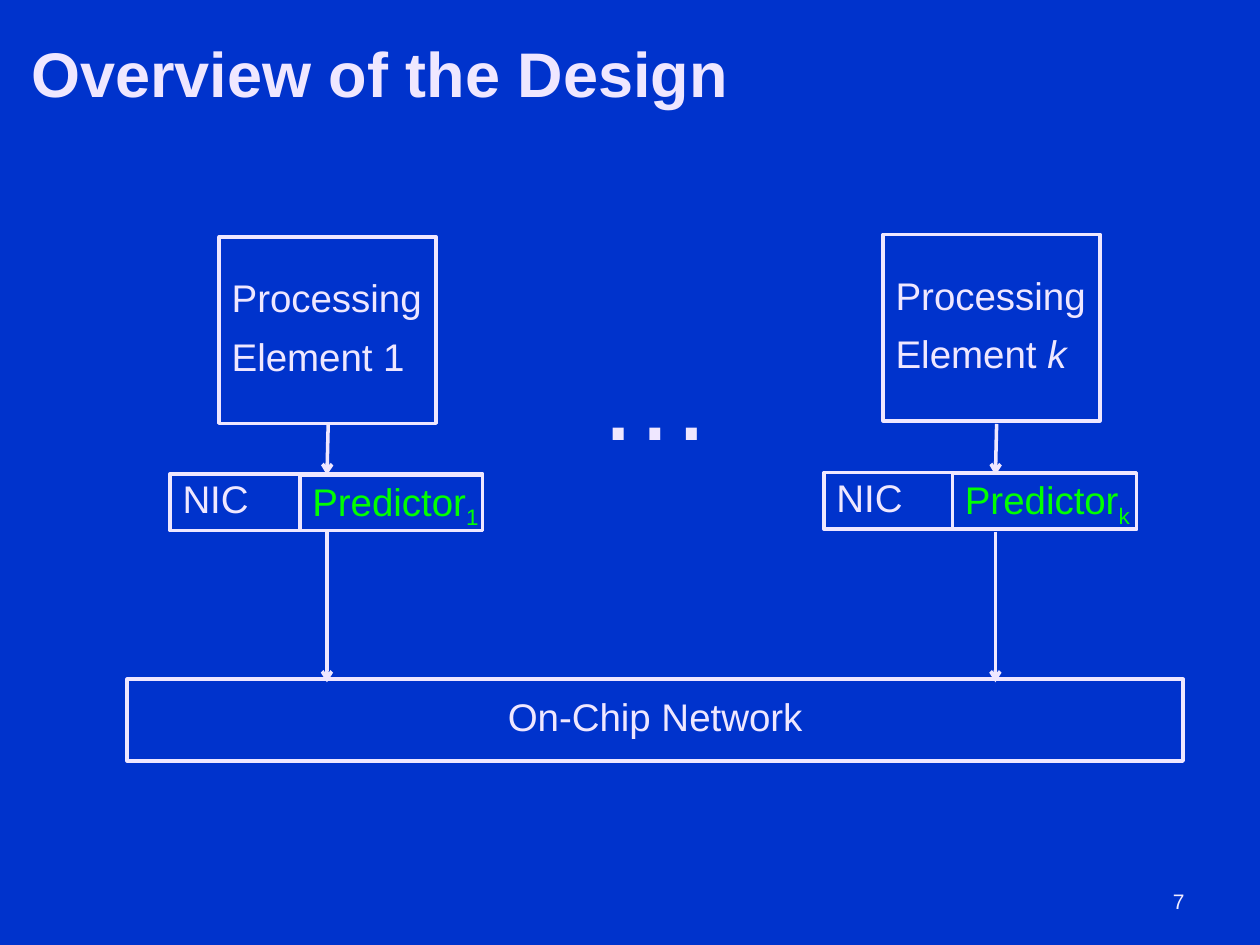
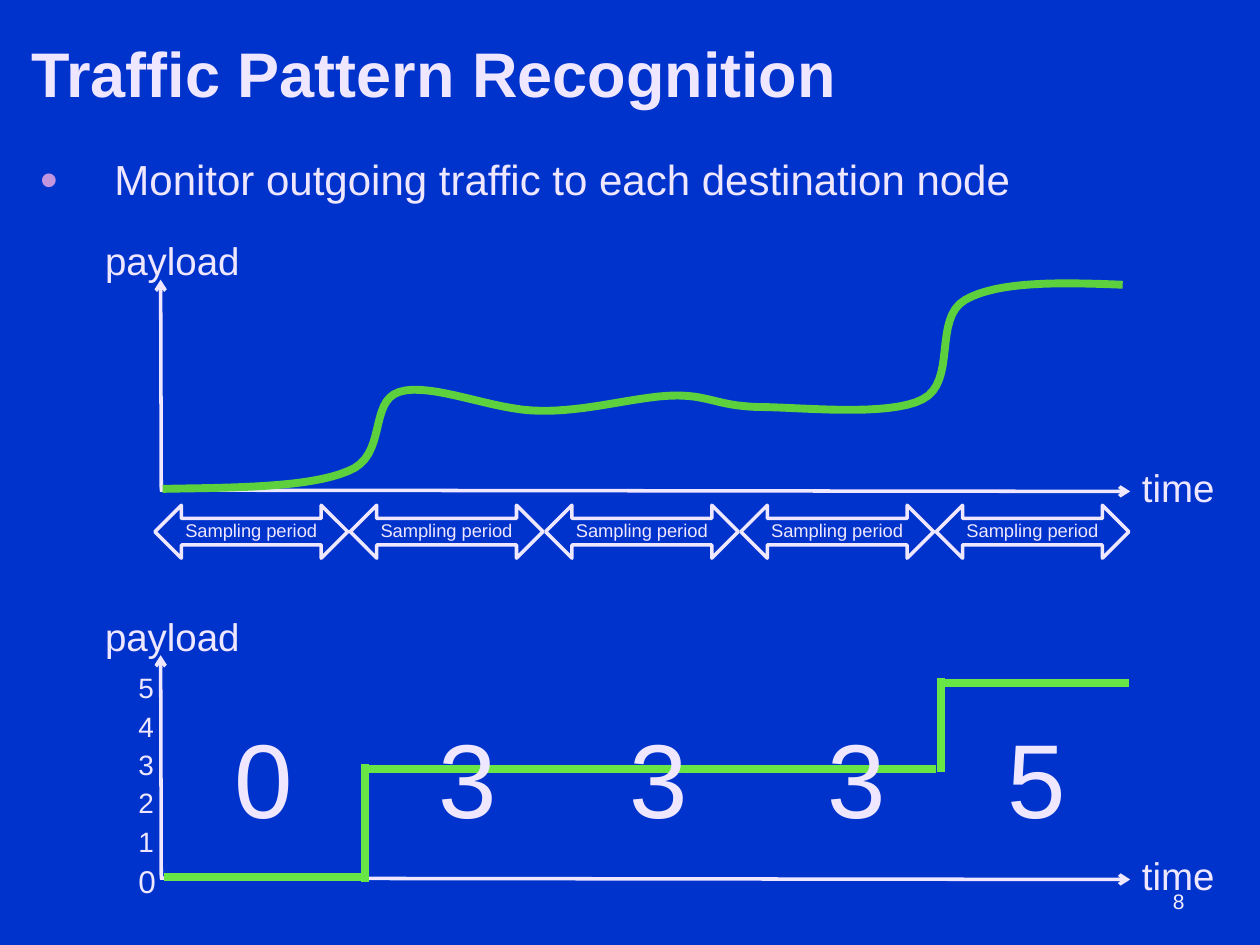
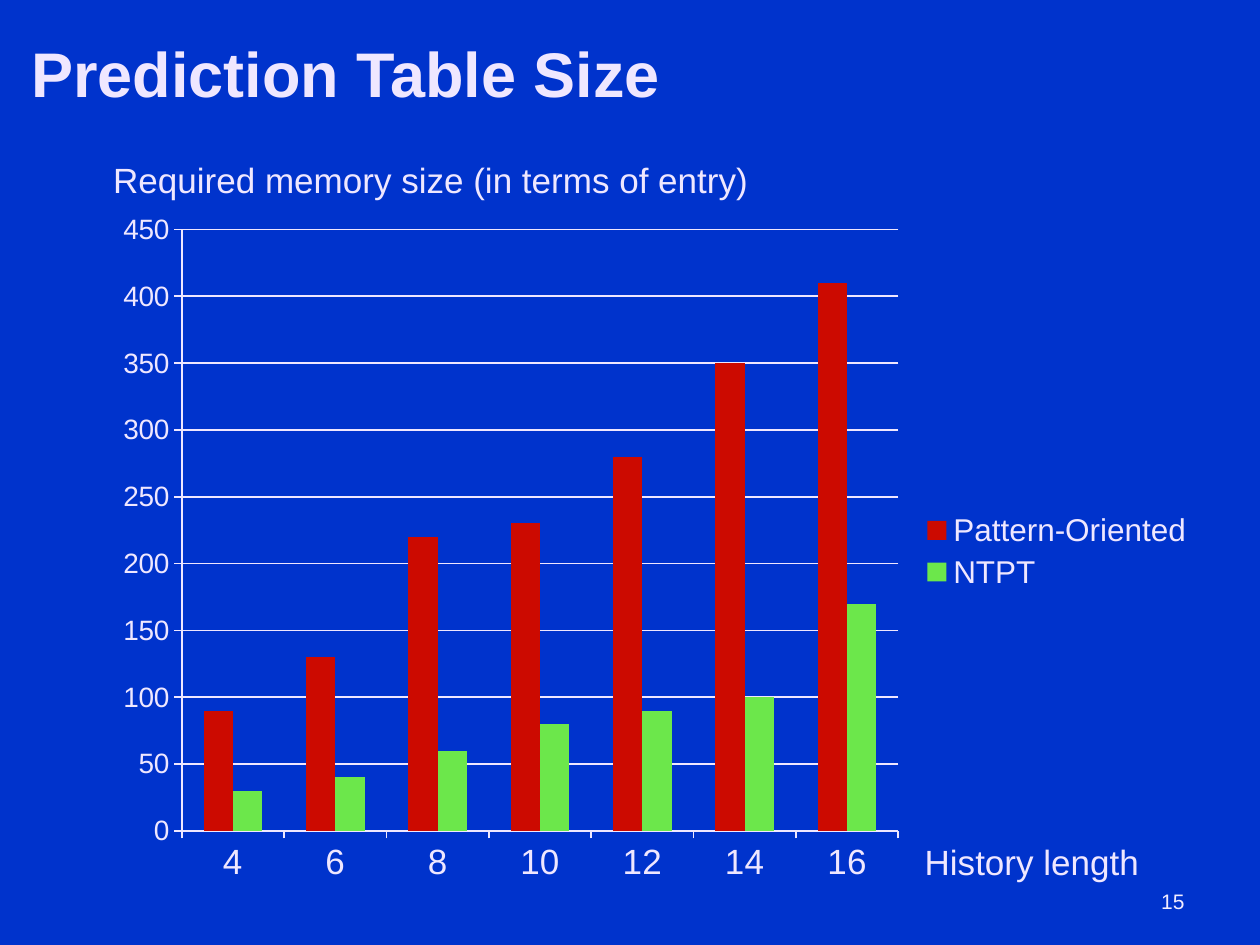
from dataclasses import dataclass
from typing import Optional

from lxml import etree
from pptx import Presentation
from pptx.chart.data import CategoryChartData
from pptx.dml.color import RGBColor
from pptx.enum.chart import XL_CHART_TYPE, XL_LEGEND_POSITION
from pptx.enum.shapes import MSO_CONNECTOR, MSO_SHAPE
from pptx.enum.text import MSO_ANCHOR, PP_ALIGN
from pptx.oxml.ns import qn
from pptx.util import Inches, Pt

LEFT, CENTER, RIGHT = PP_ALIGN.LEFT, PP_ALIGN.CENTER, PP_ALIGN.RIGHT
TOP, MIDDLE = MSO_ANCHOR.TOP, MSO_ANCHOR.MIDDLE
RECTANGLE, DOUBLE_ARROW = MSO_SHAPE.RECTANGLE, MSO_SHAPE.LEFT_RIGHT_ARROW
STRAIGHT = MSO_CONNECTOR.STRAIGHT
CLUSTERED = XL_CHART_TYPE.COLUMN_CLUSTERED
LEGEND_RIGHT = XL_LEGEND_POSITION.RIGHT

COLORS = {
    "background": "0033CC",
    "text": "EFE7FF",
    "page number": "F3EDFF",
    "bullet": "C395DF",
    "predictor": "00FF00",
    "steps": "67E646",
    "curve": "5DD03E",
    "pattern": "CC0A00",
    "table": "6CE74B",
}
FONT = "Arial"
WIDTH, HEIGHT = Inches(10), Inches(7.5)
COLUMNS, ROWS = 100, 75
SUBSCRIPT = "-25000"


@dataclass
class Label:
    """Text at a place on the grid, with an optional outlined shape."""

    text: str
    left: float
    top: float
    width: float
    height: float
    size: float = 22
    color: str = "text"
    align: PP_ALIGN = LEFT
    anchor: MSO_ANCHOR = TOP
    outline: Optional[MSO_SHAPE] = None
    bold: bool = False
    margin: float = 0.1
    spacing: float = 0.85
    suffix: str = ""
    italic_suffix: bool = False


@dataclass
class Line:
    """A straight line between two points of the grid."""

    x1: float
    y1: float
    x2: float
    y2: float
    color: str = "text"
    weight: float = 2
    arrow: bool = True


@dataclass
class Node:
    """A processing element with its network interface and predictor."""

    name: str
    italic: bool
    element_left: float
    element_top: float
    nic_left: float
    nic_top: float
    predictor_left: float
    arrow_x: float


def across(columns: float) -> int:
    """Turn grid columns into a length."""
    return round(WIDTH * columns / COLUMNS)


def down(rows: float) -> int:
    """Turn grid rows into a length."""
    return round(HEIGHT * rows / ROWS)


def rgb(name: str) -> RGBColor:
    """Look up a colour by its role."""
    return RGBColor.from_string(COLORS[name])


def style_font(font, size: float, color: str = "text", bold: bool = False) -> None:
    """Set the typeface, size, colour and weight of a font."""
    font.name, font.size, font.bold = FONT, Pt(size), bold
    font.color.rgb = rgb(color)


def style_line(line, color: str, weight: float) -> None:
    """Set the colour and weight of a line."""
    line.color.rgb = rgb(color)
    line.width = Pt(weight)


def draw_label(page, label: Label):
    """Draw a label and return its box."""
    place = (across(label.left), down(label.top), across(label.width), down(label.height))
    if label.outline is None:
        box = page.shapes.add_textbox(*place)
    else:
        box = page.shapes.add_shape(label.outline, *place)
        box.shadow.inherit = False
        box.fill.background()
        style_line(box.line, "text", 2)
    frame = box.text_frame
    frame.text = label.text
    frame.word_wrap = label.align != CENTER
    frame.vertical_anchor = label.anchor
    frame.margin_left = Inches(label.margin)
    frame.margin_right = 0 if label.align == LEFT else Inches(label.margin)
    frame.margin_top = frame.margin_bottom = Inches(label.margin / 2)
    if label.suffix:
        span = frame.paragraphs[-1].add_run()
        span.text = label.suffix
        if label.italic_suffix:
            span.font.italic = True
    for index, para in enumerate(frame.paragraphs):
        para.alignment = label.align
        para.line_spacing = label.spacing
        para.space_before = Pt(label.size / 2 if index else 0)
        for span in para.runs:
            style_font(span.font, label.size, label.color, label.bold)
    return box


def draw_line(page, line: Line) -> None:
    """Draw a straight connector, with an arrowhead if asked."""
    connector = page.shapes.add_connector(
        STRAIGHT, across(line.x1), down(line.y1), across(line.x2), down(line.y2))
    style_line(connector.line, line.color, line.weight)
    if line.arrow:
        stroke = connector.line._get_or_add_ln()
        etree.SubElement(stroke, qn("a:tailEnd"), type="arrow")
    etree.SubElement(connector._element.spPr, qn("a:effectLst"))


def add_page(deck, title: str, number: int):
    """Add a page with its title and page number."""
    page = deck.slides.add_slide(deck.slide_layouts[6])
    draw_label(page, Label(title, 2.5, 2.7, 94, 7, 36, anchor=MIDDLE, bold=True,
                           margin=0, spacing=0.87))
    draw_label(page, Label(str(number), 71.7, 69.5, 23.3, 4, 12, "page number",
                           RIGHT, MIDDLE, spacing=1))
    return page


def draw_node(page, node: Node) -> None:
    """Draw a processing element down to the network."""
    draw_label(page, Label("Processing\nElement ", node.element_left, node.element_top,
                           17.2, 14.8, anchor=MIDDLE, outline=RECTANGLE,
                           suffix=node.name, italic_suffix=node.italic))
    draw_label(page, Label("NIC", node.nic_left, node.nic_top, 24.8, 4.5,
                           anchor=MIDDLE, outline=RECTANGLE))
    right = node.nic_left + 24.8
    predictor = draw_label(page, Label(
        "Predictor", node.predictor_left, node.nic_top + 0.1,
        right - node.predictor_left, 4.4, color="predictor", anchor=MIDDLE,
        outline=RECTANGLE, suffix=node.name))
    subscript = predictor.text_frame.paragraphs[0].runs[-1]
    subscript._r.get_or_add_rPr().set("baseline", SUBSCRIPT)
    draw_line(page, Line(node.arrow_x + 0.1, 33.65, node.arrow_x, 37.7))
    draw_line(page, Line(node.arrow_x, 42.2, node.arrow_x, 54.15))


def draw_axes(page, top: float, base: float) -> None:
    """Draw a time axis and a payload axis with their names."""
    draw_line(page, Line(12.7, base, 89.7, base + 0.1))
    draw_line(page, Line(12.8, base, 12.75, top))
    draw_label(page, Label("time", 89.65, base - 2, 7.9, 4.2))
    draw_label(page, Label("payload", 7.35, top - 3.3, 12.8, 4.2))


def curve_points(start: tuple, segments: list, steps: int = 16) -> list:
    """Sample points along joined cubic curves."""
    points = []
    for first, second, end in segments:
        for step in range(1, steps + 1):
            t = step / steps
            weights = ((1 - t) ** 3, 3 * t * (1 - t) ** 2, 3 * t * t * (1 - t), t ** 3)
            corners = (start, first, second, end)
            x, y = (sum(w * corner[axis] for w, corner in zip(weights, corners))
                    for axis in (0, 1))
            points.append((across(x), down(y)))
        start = end
    return points


def draw_payload_curve(page) -> None:
    """Draw the payload over time as a smooth outline."""
    start = (12.9, 38.8)
    segments = [
        ((18.7, 38.7), (24.5, 38.7), (27.6, 37.4)),
        ((30.8, 36.2), (29.2, 31.9), (31.7, 31.1)),
        ((34.2, 30.3), (39.2, 32.6), (42.8, 32.6)),
        ((46.4, 32.7), (50.4, 31.5), (53.3, 31.4)),
        ((56.2, 31.3), (56.8, 32.2), (60.1, 32.3)),
        ((63.4, 32.3), (70.5, 33.1), (73.2, 31.7)),
        ((76, 30.3), (74, 25.3), (76.6, 23.8)),
        ((79.2, 22.3), (84.2, 22.4), (89.1, 22.6)),
    ]
    builder = page.shapes.build_freeform(across(start[0]), down(start[1]))
    builder.add_line_segments(curve_points(start, segments), close=False)
    curve = builder.convert_to_shape()
    curve.shadow.inherit = False
    curve.fill.background()
    style_line(curve.line, "curve", 4.5)


def build_overview(deck) -> None:
    """Build the design overview page."""
    page = add_page(deck, "Overview of the Design", 7)
    draw_label(page, Label("On-Chip Network", 10.1, 53.9, 83.8, 6.5, align=CENTER,
                           anchor=MIDDLE, outline=RECTANGLE))
    draw_node(page, Node("1", False, 17.4, 18.8, 13.5, 37.6, 23.8, 25.95))
    draw_node(page, Node("k", True, 70.1, 18.6, 65.4, 37.5, 75.6, 79))
    draw_label(page, Label("…", 46.4, 27, 11.3, 10.5, 66))


def build_recognition(deck) -> None:
    """Build the traffic pattern page."""
    page = add_page(deck, "Traffic Pattern Recognition", 8)
    body = draw_label(page, Label("Monitor outgoing traffic to each destination node",
                                  2.2, 12, 93.3, 55.5, 24, spacing=0.94))
    properties = body.text_frame.paragraphs[0]._p.get_or_add_pPr()
    properties.set("marL", str(Inches(0.59)))
    properties.set("indent", str(-Inches(0.59)))
    bullet_color = etree.SubElement(properties, qn("a:buClr"))
    etree.SubElement(bullet_color, qn("a:srgbClr"), val=COLORS["bullet"])
    etree.SubElement(properties, qn("a:buSzPct"), val="120000")
    etree.SubElement(properties, qn("a:buFont"), typeface=FONT)
    etree.SubElement(properties, qn("a:buChar"), char="•")

    draw_axes(page, 22.2, 38.9)
    for period in range(5):
        draw_label(page, Label("Sampling period", 12.3 + 15.5 * period, 40.1, 15.3, 4.2,
                               10.5, align=CENTER, anchor=MIDDLE, outline=DOUBLE_ARROW))
    draw_axes(page, 52, 69.7)
    steps = [
        (13, 69.6, 28.9, 69.6),
        (28.8, 61, 74.3, 61),
        (29, 70, 29, 60.6),
        (74.7, 54.2, 89.6, 54.2),
        (74.7, 61.3, 74.7, 53.8),
    ]
    for step in steps:
        draw_line(page, Line(*step, color="steps", weight=4.5, arrow=False))
    for level in range(6):
        draw_label(page, Label(str(level), 10, 68.4 - 3.05 * level, 3.4, 3.4,
                               16 if level else 18))
    for payload, left in zip("03335", (17.6, 33.8, 49, 64.7, 79)):
        draw_label(page, Label(payload, left, 57.7, 6.7, 9.6, 60))
    draw_payload_curve(page)


def place_plot(chart, x: float, y: float, w: float, h: float) -> None:
    """Fix the inner plot area as shares of the chart."""
    area = chart._chartSpace.chart.plotArea
    for old in area.findall(qn("c:layout")):
        area.remove(old)
    layout = etree.Element(qn("c:layout"))
    area.insert(0, layout)
    manual = etree.SubElement(layout, qn("c:manualLayout"))
    settings = {"layoutTarget": "inner", "xMode": "edge", "yMode": "edge",
                "x": x, "y": y, "w": w, "h": h}
    for tag, value in settings.items():
        etree.SubElement(manual, qn(f"c:{tag}"), val=str(value))


def build_table_size(deck) -> None:
    """Build the memory size chart page."""
    page = add_page(deck, "Prediction Table Size", 15)
    data = CategoryChartData()
    data.categories = ["4", "6", "8", "10", "12", "14", "16"]
    data.add_series("Pattern-Oriented", (90, 130, 220, 230, 280, 350, 410))
    data.add_series("NTPT", (30, 40, 60, 80, 90, 100, 170))
    chart = page.shapes.add_chart(CLUSTERED, across(8.3), down(16), across(87.5),
                                  down(55.5), data).chart
    style_font(chart.font, 10)
    chart.has_title = False
    chart.has_legend = True
    chart.legend.position = LEGEND_RIGHT
    chart.legend.include_in_layout = False
    style_font(chart.legend.font, 18)
    for axis, size in ((chart.category_axis, 20), (chart.value_axis, 16)):
        style_font(axis.tick_labels.font, size)
        style_line(axis.format.line, "text", 1)
    values = chart.value_axis
    values.minimum_scale, values.maximum_scale, values.major_unit = 0, 450, 50
    style_line(values.major_gridlines.format.line, "text", 1)
    plot = chart.plots[0]
    plot.gap_width, plot.overlap, plot.vary_by_categories = 150, 0, False
    for series, color in zip(plot.series, ("pattern", "table")):
        series.format.fill.solid()
        series.format.fill.fore_color.rgb = rgb(color)
    place_plot(chart, 0.07, 0.04, 0.65, 0.86)
    draw_label(page, Label("Required memory size (in terms of entry)", 8, 12.6, 60, 3.9, 20))
    draw_label(page, Label("History length", 72.4, 66.7, 19.8, 4.1, 20))


def main() -> None:
    """Build the deck and save it."""
    deck = Presentation()
    deck.slide_width, deck.slide_height = WIDTH, HEIGHT
    background = deck.slide_master.background.fill
    background.solid()
    background.fore_color.rgb = rgb("background")
    build_overview(deck)
    build_recognition(deck)
    build_table_size(deck)
    deck.save("out.pptx")


if __name__ == "__main__":
    main()
